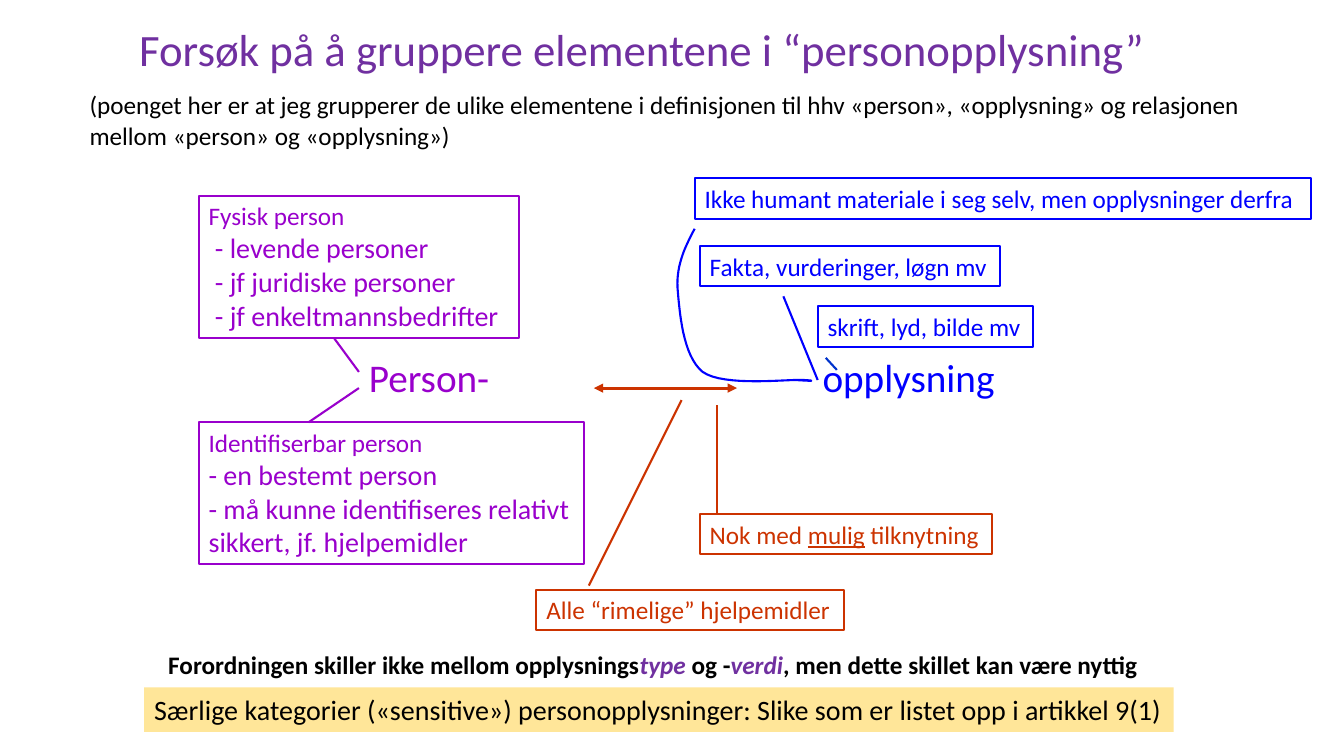
from lxml import etree
from pptx import Presentation
from pptx.dml.color import RGBColor
from pptx.enum.shapes import MSO_CONNECTOR, MSO_SHAPE
from pptx.enum.text import MSO_ANCHOR, MSO_AUTO_SIZE, PP_ALIGN
from pptx.oxml.ns import qn
from pptx.util import Inches, Pt

STRAIGHT = MSO_CONNECTOR.STRAIGHT
RECTANGLE = MSO_SHAPE.RECTANGLE
TOP, MIDDLE = MSO_ANCHOR.TOP, MSO_ANCHOR.MIDDLE
LEFT, CENTER = PP_ALIGN.LEFT, PP_ALIGN.CENTER
GROW, FIXED = MSO_AUTO_SIZE.SHAPE_TO_FIT_TEXT, MSO_AUTO_SIZE.NONE

COLUMNS, ROWS = 133.3, 75
CURVE_STEPS = 16
FONT = "Calibri"
BLACK, TITLE_PURPLE, PERSON_PURPLE = "000000", "7030A0", "9900CC"
INFO_BLUE, DARK_BLUE, RELATION_RED, YELLOW = "0000FF", "0033CC", "CC3300", "FFE699"


def color(value):
    return RGBColor.from_string(value)


def bezier(start, first, second, end):
    for step in range(1, CURVE_STEPS + 1):
        t = step / CURVE_STEPS
        weights = ((1 - t) ** 3, 3 * t * (1 - t) ** 2, 3 * t * t * (1 - t), t ** 3)
        points = (start, first, second, end)
        yield tuple(sum(w * p[axis] for w, p in zip(weights, points)) for axis in (0, 1))


class SlideBuilder:
    def __init__(self, presentation):
        self.slide = presentation.slides.add_slide(presentation.slide_layouts[6])
        self.column = presentation.slide_width / COLUMNS
        self.row = presentation.slide_height / ROWS

    def place(self, *lengths):
        units = (self.column, self.row) * 2
        return [round(length * unit) for length, unit in zip(lengths, units)]

    def fill_text(self, shape, lines, size, text_color, rest_size=None, bold=None,
                  align=LEFT, anchor=TOP, grow=GROW):
        frame = shape.text_frame
        frame.word_wrap = False
        frame.auto_size = grow
        frame.vertical_anchor = anchor
        for index, line in enumerate(lines):
            paragraph = frame.add_paragraph() if index else frame.paragraphs[0]
            paragraph.alignment = align
            font = paragraph.font
            font.name, font.bold = FONT, bold
            font.size = Pt(rest_size if index and rest_size else size)
            font.color.rgb = color(text_color)
            for part in [line] if isinstance(line, str) else line:
                text, style = (part, None) if isinstance(part, str) else part
                run = paragraph.add_run()
                run.text = text
                if style == "underline":
                    run.font.underline = True
                elif style:
                    run.font.italic = True
                    run.font.color.rgb = color(style)

    def text(self, area, lines, size, text_color, **options):
        shape = self.slide.shapes.add_textbox(*self.place(*area))
        self.fill_text(shape, lines, size, text_color, **options)

    def box(self, area, lines, size, text_color, fill=None, **options):
        shape = self.slide.shapes.add_shape(RECTANGLE, *self.place(*area))
        shape.shadow.inherit = False
        if fill:
            shape.fill.solid()
            shape.fill.fore_color.rgb = color(fill)
            shape.line.fill.background()
        else:
            shape.fill.background()
            self.outline(shape, text_color)
        self.fill_text(shape, lines, size, text_color, **options)

    def outline(self, shape, line_color, width=1.5):
        shape.line.color.rgb = color(line_color)
        shape.line.width = Pt(width)

    def line(self, start, end, line_color, width=1.5, arrows=False):
        connector = self.slide.shapes.add_connector(STRAIGHT, *self.place(*start, *end))
        self.outline(connector, line_color, width)
        properties = connector._element.spPr
        if arrows:
            for tag in ("a:headEnd", "a:tailEnd"):
                etree.SubElement(properties.find(qn("a:ln")), qn(tag), type="triangle")
        etree.SubElement(properties, qn("a:effectLst"))

    def curve(self, start, segments, line_color):
        points, current = [], start
        for first, second, end in segments:
            points.extend(bezier(current, first, second, end))
            current = end
        builder = self.slide.shapes.build_freeform(*self.place(*start))
        builder.add_line_segments([self.place(*point) for point in points], close=False)
        shape = builder.convert_to_shape()
        shape.shadow.inherit = False
        shape.fill.background()
        self.outline(shape, line_color)


def main():
    presentation = Presentation()
    presentation.slide_width, presentation.slide_height = Inches(13.33), Inches(7.5)
    page = SlideBuilder(presentation)

    page.text((12.8, 1.9, 102.8, 5.8), ["Forsøk på å gruppere elementene i “personopplysning” "],
              32, TITLE_PURPLE, align=CENTER, anchor=MIDDLE, grow=FIXED)
    page.text((7.9, 8.4, 117.6, 7.1), [
        "(poenget her er at jeg grupperer de ulike elementene i definisjonen til hhv "
        "«person», «opplysning» og relasjonen",
        "mellom «person» og «opplysning»)"], 18, BLACK)

    page.text((35.6, 34.6, 14.1, 5.7), ["Person-"], 28, PERSON_PURPLE)
    page.text((80.6, 34.6, 19.3, 5.7), ["opplysning"], 28, INFO_BLUE)
    page.line((58.9, 38.5), (73.1, 38.5), RELATION_RED, 2.25, arrows=True)

    page.box((19.7, 19.4, 31.8, 14.1), [
        "Fysisk person", " - levende personer", " - jf juridiske personer",
        " - jf enkeltmannsbedrifter"], 18, PERSON_PURPLE, rest_size=20)
    page.box((19.7, 41.9, 38.2, 14.1), [
        "Identifiserbar person", "- en bestemt person", "- må kunne identifiseres relativt",
        "sikkert, jf. hjelpemidler"], 18, PERSON_PURPLE, rest_size=20)

    for area, line in (
        ((68.9, 17.7, 61.1, 4), "Ikke humant materiale i seg selv, men opplysninger derfra"),
        ((69.4, 24.4, 29.8, 4), "Fakta, vurderinger, løgn mv"),
        ((81.1, 30.4, 21.4, 4), "skrift, lyd, bilde mv"),
    ):
        page.box(area, [line], 18, INFO_BLUE)
    page.curve((68.9, 22.7), [
        ((68, 24.4), (67.1, 26.2), (67.2, 28.5)),
        ((67.4, 30.9), (67.7, 35.3), (69.7, 36.9)),
        ((71.8, 38.4), (78.2, 37.6), (79.7, 37.7)),
        ((81.3, 37.8), (80.1, 37.8), (78.9, 37.7))], INFO_BLUE)

    page.box((69.4, 51, 29, 4), [["Nok med ", ("mulig", "underline"), " tilknytning"]],
             18, RELATION_RED)
    page.box((53.2, 58.5, 30.5, 4), ["Alle “rimelige” hjelpemidler"], 18, RELATION_RED)

    for start, end, line_color in (
        ((33.1, 33.5), (35.6, 36.9), PERSON_PURPLE),
        ((30.6, 41.9), (35.6, 38.5), PERSON_PURPLE),
        ((77.7, 29.4), (81.1, 37.7), INFO_BLUE),
        ((81.9, 35.5), (83, 36.7), DARK_BLUE),
        ((71.1, 51), (71.1, 40.2), RELATION_RED),
        ((58.4, 58.1), (67.6, 39.7), RELATION_RED),
    ):
        page.line(start, end, line_color)

    page.text((15.7, 63.9, 99.2, 4), [[
        "Forordningen skiller ikke mellom opplysnings", ("type", TITLE_PURPLE), " og -",
        ("verdi", TITLE_PURPLE), ", men dette skillet kan være nyttig"]], 18, BLACK, bold=True)
    page.box((14.3, 68.2, 102.1, 4.4), [
        "Særlige kategorier («sensitive») personopplysninger: "
        "Slike som er listet opp i artikkel 9(1)"], 20, BLACK, fill=YELLOW)

    presentation.save("out.pptx")


if __name__ == "__main__":
    main()
